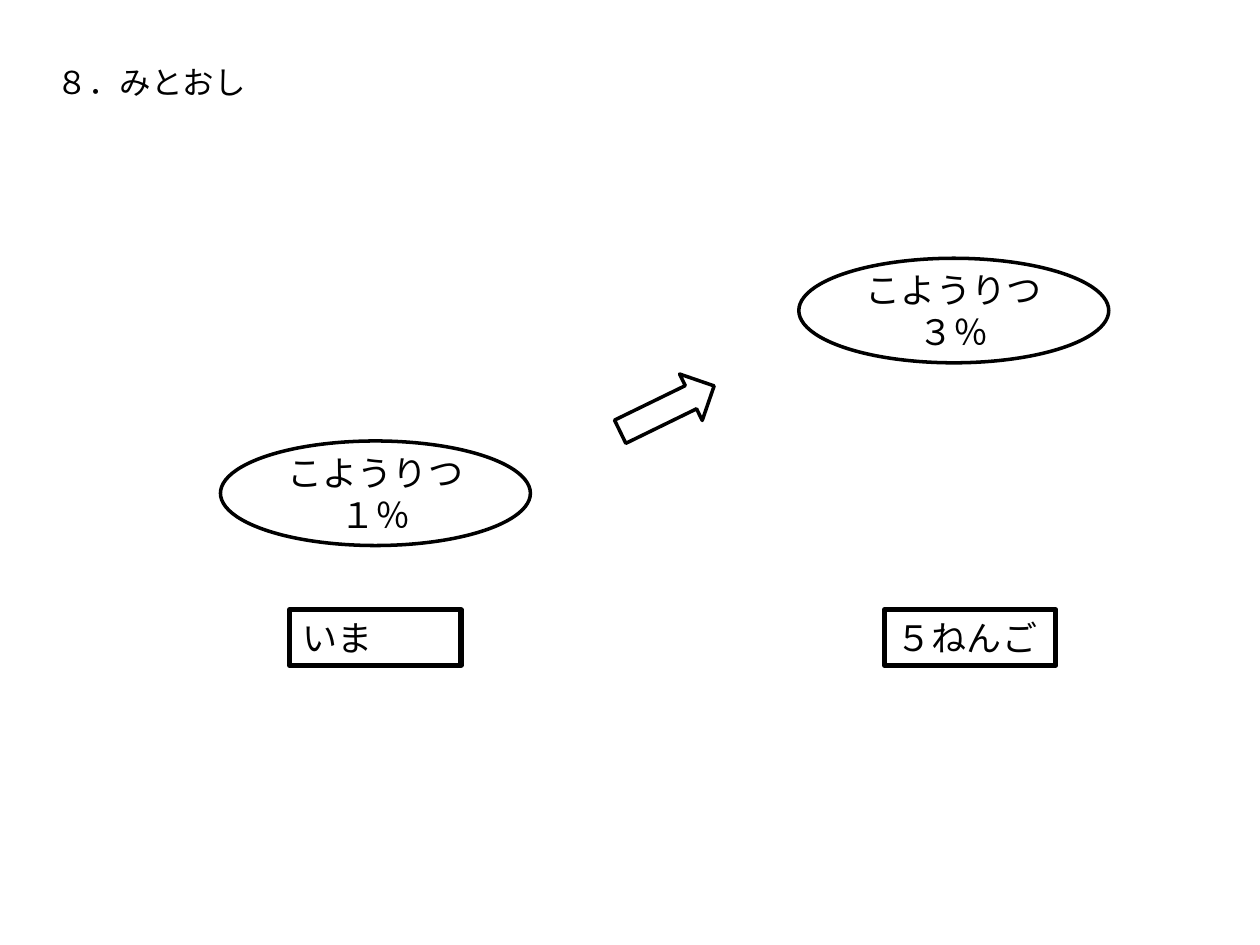
"""Build the outlook slide: employment rate now and in five years."""
from dataclasses import dataclass

from pptx import Presentation
from pptx import util as u
from pptx.dml.color import RGBColor
from pptx.enum import shapes, text


@dataclass(frozen=True)
class Theme:
    ink: RGBColor = RGBColor(0, 0, 0)
    font: str = "Calibri"
    title_size: int = 18
    body_size: int = 20
    thin: int = 2
    thick: int = 3


theme = Theme()
deck = Presentation()
deck.slide_width, deck.slide_height = u.Inches(10), u.Inches(7.5)
page = deck.slides.add_slide(deck.slide_layouts[6])
column, row = deck.slide_width // 100, deck.slide_height // 75


def write(box, words, size=theme.body_size, align=text.PP_ALIGN.LEFT,
          anchor=text.MSO_ANCHOR.TOP, wrap=True):
    frame = box.text_frame
    frame.word_wrap = wrap
    frame.vertical_anchor = anchor
    frame.text = words
    for para in frame.paragraphs:
        para.alignment = align
        for span in para.runs:
            span.font.name = theme.font
            span.font.size = u.Pt(size)
            span.font.color.rgb = theme.ink


def outline(kind, left, top, width, height, weight):
    shape = page.shapes.add_shape(kind, *(
        round(length) for length in
        (left * column, top * row, width * column, height * row)))
    shape.shadow.inherit = False
    shape.fill.background()
    shape.line.color.rgb = theme.ink
    shape.line.width = u.Pt(weight)
    return shape


title = page.shapes.add_textbox(
    round(3.5 * column), round(4.5 * row), round(19.2 * column), 4 * row)
write(title, "８．みとおし", size=theme.title_size, wrap=False)

arrow = outline(shapes.MSO_SHAPE.RIGHT_ARROW, 48.8, 30.4, 8.3, 4.1, theme.thin)
arrow.rotation = 334

stages = [
    ("いま", 23, "こようりつ\n１％", 17.5, 35),
    ("５ねんご", 70.2, "こようりつ\n３％", 63.4, 20.5),
]
for period, label_left, rate, oval_left, oval_top in stages:
    label = outline(shapes.MSO_SHAPE.RECTANGLE, label_left, 48.4, 13.6, 4.4, theme.thick)
    write(label, period)
    oval = outline(shapes.MSO_SHAPE.OVAL, oval_left, oval_top, 24.6, 8.3, theme.thin)
    write(oval, rate, align=text.PP_ALIGN.CENTER, anchor=text.MSO_ANCHOR.MIDDLE)

deck.save("out.pptx")
